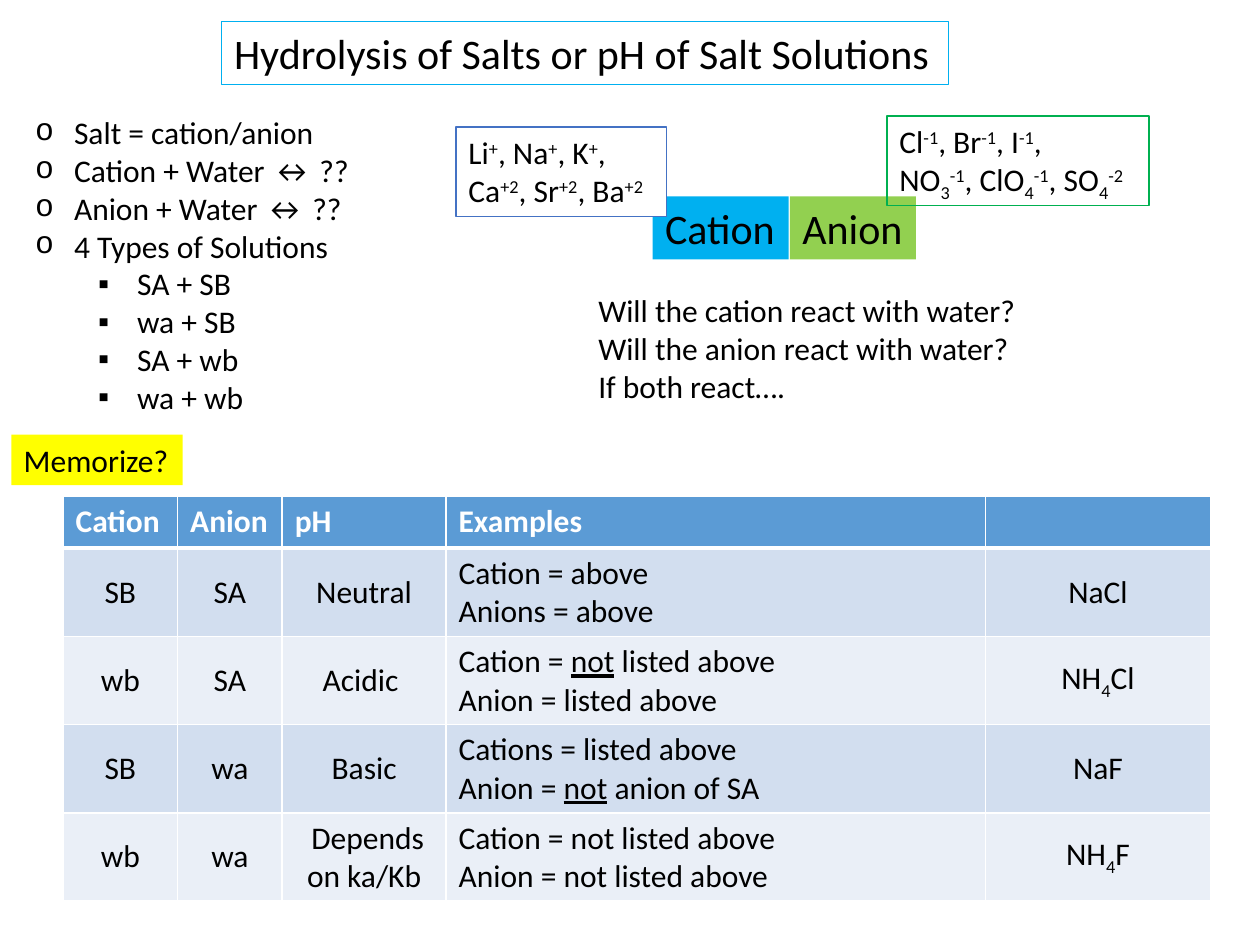
from lxml import etree
from pptx import Presentation
from pptx.dml.color import RGBColor
from pptx.enum.text import MSO_ANCHOR, MSO_AUTO_SIZE, PP_ALIGN
from pptx.oxml.ns import qn
from pptx.util import Inches, Pt

MIDDLE = MSO_ANCHOR.MIDDLE
FIT_SHAPE = MSO_AUTO_SIZE.SHAPE_TO_FIT_TEXT
CENTER, LEFT = PP_ALIGN.CENTER, PP_ALIGN.LEFT
FONT = "Calibri"
BLACK, WHITE = "000000", "FFFFFF"
HEADER_FILL, BAND_FILLS = "5B9BD5", ("D2DEEF", "EAEFF7")
BASELINES = {"^": "30000", "_": "-25000"}

# In texts, "|" separates runs; ^ marks superscript, _ subscript, * underline.
CATIONS = ["Li|^+|, Na|^+|, K|^+|,", "Ca|^+2|, Sr|^+2|, Ba|^+2"]
ANIONS = ["Cl|^-1|, Br|^-1|, I|^-1|,",
          "NO|_3|^-1|, ClO|_4|^-1|, SO|_4|^-2"]
TOPICS = ["Salt = cation/anion", "Cation + Water ↔ ??",
          "Anion + Water ↔ ??", "4 Types of Solutions"]
SOLUTIONS = ["SA + SB", "wa + SB", "SA + wb", "wa + wb"]
QUESTIONS = ["Will the cation react with water?",
             "Will the anion react with water?", "If both react…."]
HEADER = ["Cation", "Anion", "pH", "Examples", ""]
ROWS = [
    ["SB", "SA", "Neutral", "Cation = above\nAnions = above", "NaCl"],
    ["wb", "SA", "Acidic ",
     "Cation = |*not| listed above\nAnion = listed above", "NH|_4|Cl"],
    ["SB", "wa", "Basic",
     "Cations = listed above\nAnion = |*not| anion of SA", "NaF"],
    ["wb", "wa", " Depends on ka/Kb",
     "Cation = not listed above\nAnion = not listed above", "NH|_4|F"],
]
COLUMN_WIDTHS = [0.91, 0.83, 1.3, 4.28, 1.79]
EXAMPLES_COLUMN = 3


def color(hex_value):
    return RGBColor.from_string(hex_value)


def add_runs(para, marked_text, size, text_color=BLACK, bold=False):
    for piece in filter(None, marked_text.split("|")):
        mark = piece[0] if piece[0] in "^_*" else ""
        span = para.add_run()
        span.text = piece[len(mark):]
        font = span.font
        font.name, font.size, font.bold = FONT, Pt(size), bold
        font.color.rgb = color(text_color)
        if mark == "*":
            font.underline = True
        elif mark:
            font._element.set("baseline", BASELINES[mark])


def fill_paragraphs(frame, lines, size, align=LEFT, **style):
    for index, line in enumerate(lines):
        para = frame.paragraphs[0] if index == 0 else frame.add_paragraph()
        para.alignment = align
        add_runs(para, line, size, **style)


def add_box(shapes, place, lines, size=18, fill=None, line=None, line_width=0.75):
    box = shapes.add_textbox(*(Inches(length) for length in place))
    frame = box.text_frame
    frame.word_wrap = False
    frame.auto_size = FIT_SHAPE
    fill_paragraphs(frame, lines, size)
    if fill:
        box.fill.solid()
        box.fill.fore_color.rgb = color(fill)
    if line:
        box.line.color.rgb = color(line)
        box.line.width = Pt(line_width)
    return box


def set_bullet(para, symbol, font_name, left, level):
    para.level = level
    properties = para._p.get_or_add_pPr()
    properties.set("marL", str(Inches(left)))
    properties.set("indent", str(Inches(-0.31)))
    etree.SubElement(properties, qn("a:buFont"), typeface=font_name)
    etree.SubElement(properties, qn("a:buChar"), char=symbol)


def add_outline(shapes):
    box = add_box(shapes, (0.18, 0.85, 2.73, 2.83), TOPICS + SOLUTIONS)
    for index, para in enumerate(box.text_frame.paragraphs):
        if index < len(TOPICS):
            set_bullet(para, "o", "Courier New", 0.31, 0)
        else:
            set_bullet(para, "▪", "Arial", 0.81, 1)


def set_borders(cell, top, bottom):
    """Draw white borders, with the top and bottom widths in points."""
    properties = cell._tc.get_or_add_tcPr()
    widths = {"L": 1, "R": 1, "T": top, "B": bottom}
    for position, (side, width) in enumerate(widths.items()):
        border = etree.Element(qn("a:ln" + side), w=str(Pt(width)))
        solid = etree.SubElement(border, qn("a:solidFill"))
        etree.SubElement(solid, qn("a:srgbClr"), val=WHITE)
        properties.insert(position, border)


def style_cell(cell, row, column, text):
    is_header = row == 0
    cell.fill.solid()
    cell.fill.fore_color.rgb = color(
        HEADER_FILL if is_header else BAND_FILLS[(row - 1) % 2])
    set_borders(cell, 3 if row == 1 else 1, 3 if is_header else 1)
    if not is_header:
        cell.vertical_anchor = MIDDLE
    align = LEFT if is_header or column == EXAMPLES_COLUMN else CENTER
    fill_paragraphs(cell.text_frame, text.split("\n"), 18, align,
                    text_color=WHITE if is_header else BLACK, bold=is_header)


def add_salt_table(shapes):
    contents = [HEADER] + ROWS
    table = shapes.add_table(len(contents), len(HEADER), Inches(0.5),
                             Inches(3.94), Inches(9.11), Inches(3.21)).table
    for column, width in zip(table.columns, COLUMN_WIDTHS):
        column.width = Inches(width)
    for row, texts in enumerate(contents):
        table.rows[row].height = Inches(0.7 if row else 0.41)
        for column, text in enumerate(texts):
            style_cell(table.cell(row, column), row, column, text)


def add_ion_group(shapes):
    group = shapes.add_group_shape().shapes
    add_box(group, (5.18, 1.56, 1.08, 0.5), ["Cation"], 24, fill="00B0F0")
    add_box(group, (6.27, 1.56, 1, 0.5), ["Anion"], 24, fill="92D050")
    add_box(group, (3.62, 1.01, 1.67, 0.71), CATIONS,
            fill=WHITE, line="4472C4", line_width=1)
    add_box(group, (7.04, 0.92, 2.08, 0.71), ANIONS, line="00B050")


def main():
    deck = Presentation()
    deck.slide_width, deck.slide_height = Inches(10), Inches(7.5)
    page = deck.slides.add_slide(deck.slide_layouts[6])
    shapes = page.shapes
    add_box(shapes, (1.76, 0.17, 5.77, 0.5),
            ["Hydrolysis of Salts or pH of Salt Solutions"], 24, line="00B0F0")
    add_outline(shapes)
    add_box(shapes, (4.65, 2.26, 3.55, 1.01), QUESTIONS)
    add_salt_table(shapes)
    add_ion_group(shapes)
    add_box(shapes, (0.09, 3.45, 1.36, 0.4), ["Memorize?"], fill="FFFF00")
    deck.save("out.pptx")


if __name__ == "__main__":
    main()
